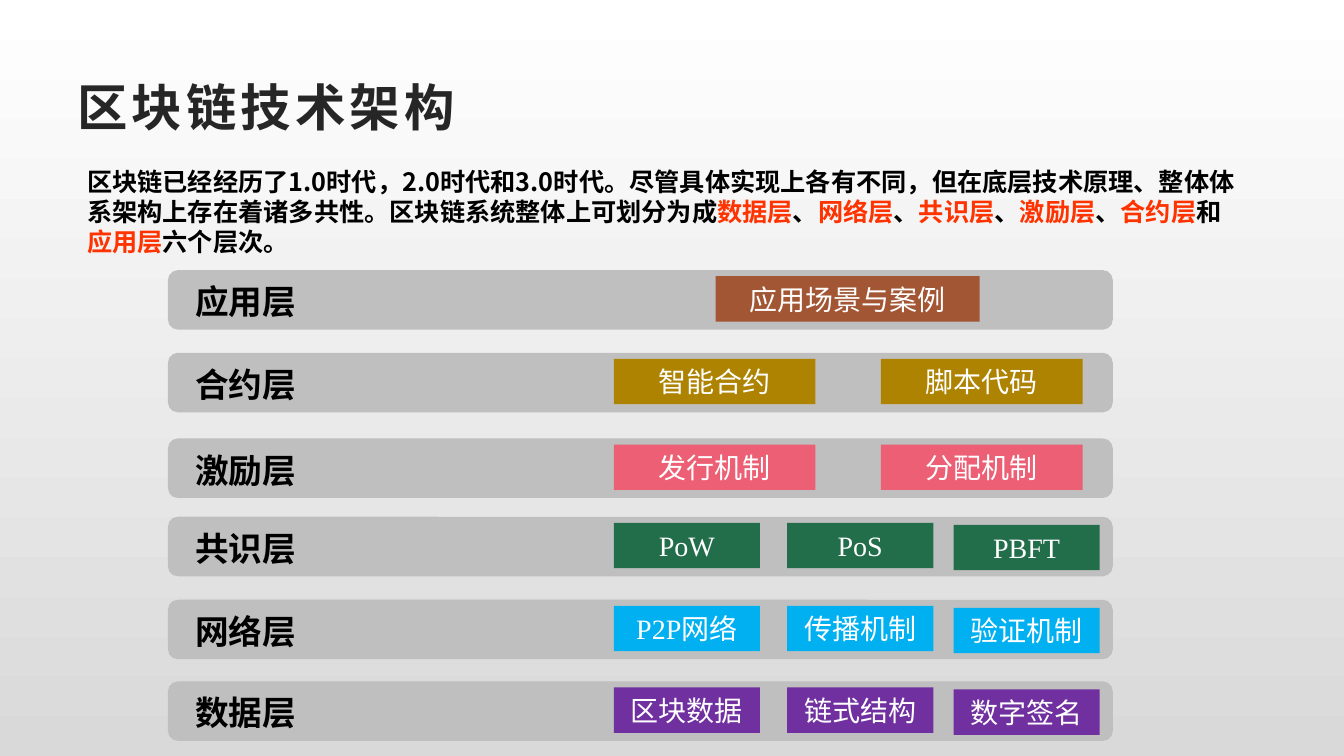
from lxml import etree
from pptx import Presentation
from pptx import util as u
from pptx.dml.color import RGBColor
from pptx.enum import shapes, text
from pptx.oxml.ns import qn

CJK, ARIAL, TIMES = "Noto Sans CJK SC", "Arial", "Times New Roman"
SINGLE = [(21.3, 7.86, 0)]
PAIR = [(18.27, 6, 0), (26.22, 6, 0)]
TRIPLE = [(18.27, 4.35, 0), (23.43, 4.35, 0), (28.38, 4.35, 0.06)]
LAYERS = [
    (8.04, "应用层", "A35634", CJK, SINGLE, ["应用场景与案例"]),
    (10.5, "合约层", "AD8301", CJK, PAIR, ["智能合约", "脚本代码"]),
    (13.05, "激励层", "EC5F74", CJK, PAIR, ["发行机制", "分配机制"]),
    (15.38, "共识层", "226E4B", TIMES, TRIPLE, ["PoW", "PoS", "PBFT"]),
    (17.85, "网络层", "00B0F0", TIMES, TRIPLE, ["P2P网络", "传播机制", "验证机制"]),
    (20.28, "数据层", "7030A0", TIMES, TRIPLE, ["区块数据", "链式结构", "数字签名"]),
]
INTRO = ("区块链已经经历了1.0时代，2.0时代和3.0时代。尽管具体实现上各有不同，"
         "但在底层技术原理、整体体系架构上存在着诸多共性。区块链系统整体上可划分为成"
         "|数据层|、|网络层|、|共识层|、|激励层|、|合约层|和|应用层|六个层次。")


def rgb(value):
    return RGBColor.from_string(value)


class Canvas:
    """Draw styled elements on one slide, measured on a 40 by 22.5 grid."""

    def __init__(self, deck):
        self.page = deck.slides.add_slide(deck.slide_layouts[6])
        self.column = deck.slide_width / 40
        self.row = deck.slide_height / 22.5

    def place(self, left, top, width, height):
        return (round(left * self.column), round(top * self.row),
                round(width * self.column), round(height * self.row))

    def background(self, *colours):
        fill = self.page.background.fill
        fill.gradient()
        fill.gradient_angle = 270
        for stop, colour in zip(fill.gradient_stops, colours):
            stop.color.rgb = rgb(colour)

    def style(self, para, size, font, colour, bold=False):
        para.font.size = u.Pt(size)
        para.font.name = font
        para.font.bold = bold
        if colour:
            para.font.color.rgb = rgb(colour)
        properties = para.font._element if hasattr(para.font, "_element") else para.font._rPr
        latin = properties.find(qn("a:latin"))
        east_asian = etree.Element(qn("a:ea"), typeface=CJK)
        latin.addnext(east_asian)
        return properties

    def text_box(self, spot, size, font, colour, align=None):
        box = self.page.shapes.add_textbox(*self.place(*spot))
        box.text_frame.word_wrap = True
        para = box.text_frame.paragraphs[0]
        para.alignment = align
        return box.text_frame, para, self.style(para, size, font, colour, True)

    def title(self, spot, words):
        frame, para, properties = self.text_box(spot, 36, ARIAL, "262626")
        frame.vertical_anchor = text.MSO_ANCHOR.MIDDLE
        properties.set("spc", "300")
        para.add_run().text = words

    def label(self, spot, words):
        frame, para, _ = self.text_box(spot, 24, ARIAL, "000000", text.PP_ALIGN.JUSTIFY)
        frame.auto_size = text.MSO_AUTO_SIZE.SHAPE_TO_FIT_TEXT
        para.add_run().text = words

    def intro(self, spot, words):
        frame, para, _ = self.text_box(spot, 18, CJK, None)
        frame.auto_size = text.MSO_AUTO_SIZE.SHAPE_TO_FIT_TEXT
        for index, part in enumerate(words.split("|")):
            span = para.add_run()
            span.text = part
            span.font.color.rgb = rgb("FF3300" if index % 2 else "000000")

    def block(self, kind, spot, fill):
        shape = self.page.shapes.add_shape(kind, *self.place(*spot))
        shape.shadow.inherit = False
        shape.fill.solid()
        shape.fill.fore_color.rgb = rgb(fill)
        shape.line.fill.background()
        return shape

    def band(self, spot):
        self.block(shapes.MSO_SHAPE.ROUNDED_RECTANGLE, spot, "BFBFBF")

    def chip(self, spot, fill, font, words):
        frame = self.block(shapes.MSO_SHAPE.RECTANGLE, spot, fill).text_frame
        frame.word_wrap = True
        frame.vertical_anchor = text.MSO_ANCHOR.MIDDLE
        para = frame.paragraphs[0]
        para.alignment = text.PP_ALIGN.CENTER
        self.style(para, 20, font, "FFFFFF")
        para.add_run().text = words


def main():
    deck = Presentation()
    deck.slide_width, deck.slide_height = u.Inches(13.33), u.Inches(7.5)
    canvas = Canvas(deck)
    canvas.background("FFFFFF", "D9D9D9")
    canvas.title((2, 2, 36, 2.3), "区块链技术架构")
    for top, name, fill, font, slots, items in LAYERS:
        canvas.band((5, top, 28.12, 1.77))
        canvas.label((5.52, top + 0.18, 3.7, 1.5), name)
        for (left, width, drop), item in zip(slots, items):
            canvas.chip((left, top + 0.18 + drop, width, 1.35), fill, font, item)
    canvas.intro((2.3, 4.8, 34.75, 3.93), INTRO)
    deck.save("out.pptx")


if __name__ == "__main__":
    main()
